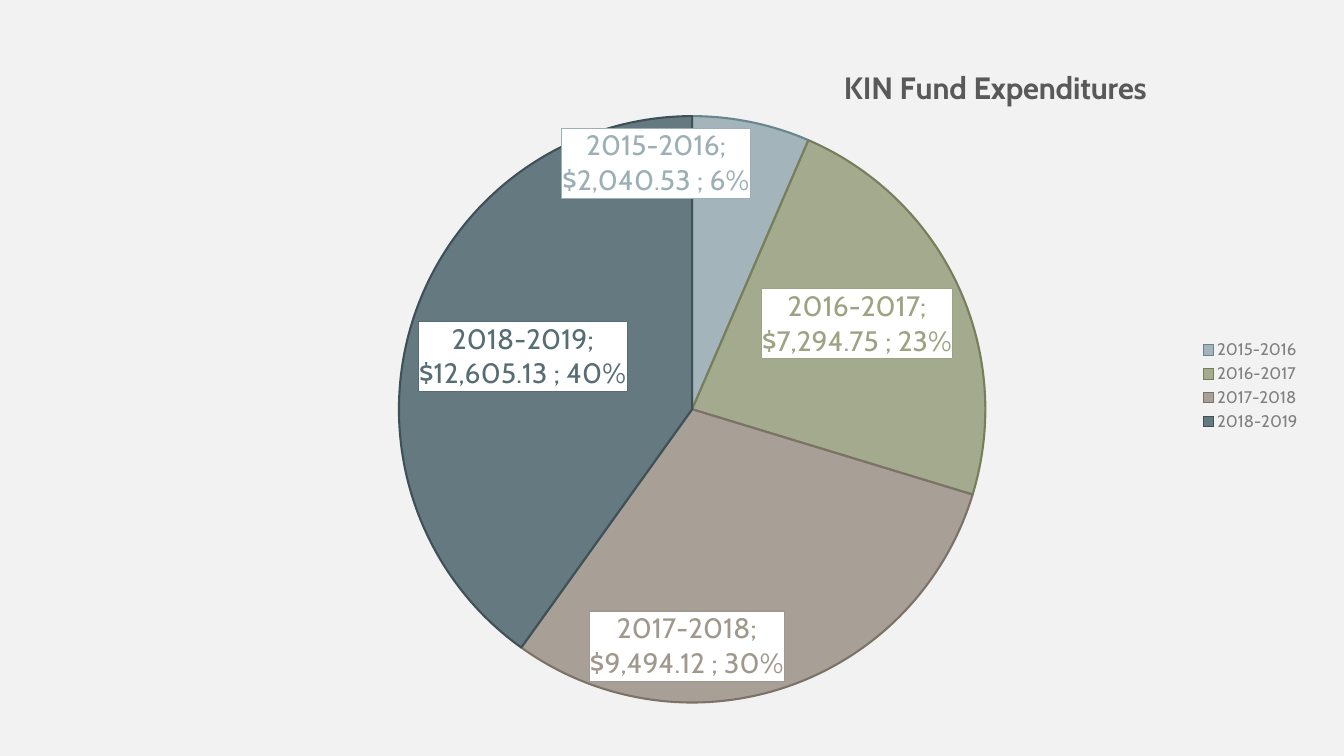
from lxml import etree
from pptx import Presentation
from pptx.chart.data import CategoryChartData
from pptx.dml.color import RGBColor
from pptx.enum import chart as c
from pptx.oxml import parse_xml
from pptx.oxml.ns import nsdecls, qn
from pptx.util import Pt

FONT = "Cabin"
NUMBER_FORMAT = '"$"#,##0.00_);[Red]\\("$"#,##0.00\\)'
# year, amount, fill and label text, outline
EXPENDITURES = [
    ("2015-2016", 2040.53, "9BAFB5", "68878D"),
    ("2016-2017", 7294.75, "9CA383", "767E5C"),
    ("2017-2018", 9494.12, "A0988C", "7C7267"),
    ("2018-2019", 12605.13, "566D74", "3F5158"),
]


def color(hex_string):
    return RGBColor.from_string(hex_string)


def manual_layout(**settings):
    """Return a c:layout element; each setting names a child of manualLayout."""
    children = "".join(f'<c:{name} val="{value}"/>' for name, value in settings.items())
    return parse_xml(f'<c:layout {nsdecls("c")}><c:manualLayout>{children}</c:manualLayout></c:layout>')


presentation = Presentation()
presentation.slide_width, presentation.slide_height = Pt(960), Pt(540)
slide = presentation.slides.add_slide(presentation.slide_layouts[6])
slide.background.fill.solid()
slide.background.fill.fore_color.rgb = color("F2F2F2")

chart_data = CategoryChartData(number_format=NUMBER_FORMAT)
chart_data.categories = [row[0] for row in EXPENDITURES]
chart_data.add_series("Series 1", [row[1] for row in EXPENDITURES])
chart = slide.shapes.add_chart(
    c.XL_CHART_TYPE.PIE, Pt(52), Pt(43.5), Pt(884.9), Pt(464.4), chart_data).chart
chart.font.name, chart.font.size = FONT, Pt(10)

# Title, legend and plot area
chart.has_title = True
paragraph = chart.chart_title.text_frame.paragraphs[0]
paragraph.text = "KIN Fund Expenditures"
paragraph.font.name, paragraph.font.size, paragraph.font.bold = FONT, Pt(22), True
paragraph.font.color.rgb = color("595959")
title = chart.chart_title._element
for layout in title.findall(qn("c:layout")):
    title.remove(layout)
title.find(qn("c:tx")).addnext(manual_layout(xMode="edge", yMode="edge", x=0.618, y=0))

chart.has_legend = True
chart.legend.position = c.XL_LEGEND_POSITION.RIGHT
chart.legend.include_in_layout = False
chart.legend.font.name, chart.legend.font.size = FONT, Pt(12)
chart.legend.font.color.rgb = color("808080")

plot_area = chart._chartSpace.chart.plotArea
for layout in plot_area.findall(qn("c:layout")):
    plot_area.remove(layout)
plot_area.insert(0, manual_layout(
    layoutTarget="inner", xMode="edge", yMode="edge", x=0, y=0.085, w=1, h=0.902))

# Slices and their labels
plot = chart.plots[0]
plot.vary_by_categories = True
series = plot.series[0]
labels = series.data_labels
labels.position = c.XL_LABEL_POSITION.INSIDE_END
labels.show_value = labels.show_percentage = labels.show_category_name = True
labels.font.name, labels.font.size = FONT, Pt(20)

for index, (year, amount, fill, outline) in enumerate(EXPENDITURES):
    point = series.points[index]
    point.format.fill.solid()
    point.format.fill.fore_color.rgb = color(fill)
    fill_color = point.format.fill._xPr.find(qn("a:solidFill"))[0]
    etree.SubElement(fill_color, qn("a:alpha"), val="90000")
    point.format.line.color.rgb = color(outline)
    point.format.line.width = Pt(1.5)

    label = point.data_label
    label.font.name, label.font.size = FONT, Pt(20)
    label.font.color.rgb = color(fill)
    label.position = c.XL_LABEL_POSITION.INSIDE_END
    element = label._dLbl
    for name in ("c:showCatName", "c:showPercent"):
        element.find(qn(name)).set("val", "1")
    for box in element.findall(qn("c:spPr")):
        element.remove(box)
    element.find(qn("c:txPr")).addprevious(parse_xml(
        f'<c:spPr {nsdecls("c", "a")}><a:solidFill><a:srgbClr val="FFFFFF"/></a:solidFill>'
        f'<a:ln w="9525"><a:solidFill><a:srgbClr val="{fill}"/></a:solidFill></a:ln></c:spPr>'))
    etree.SubElement(element, qn("c:separator")).text = "; "

presentation.save("out.pptx")
